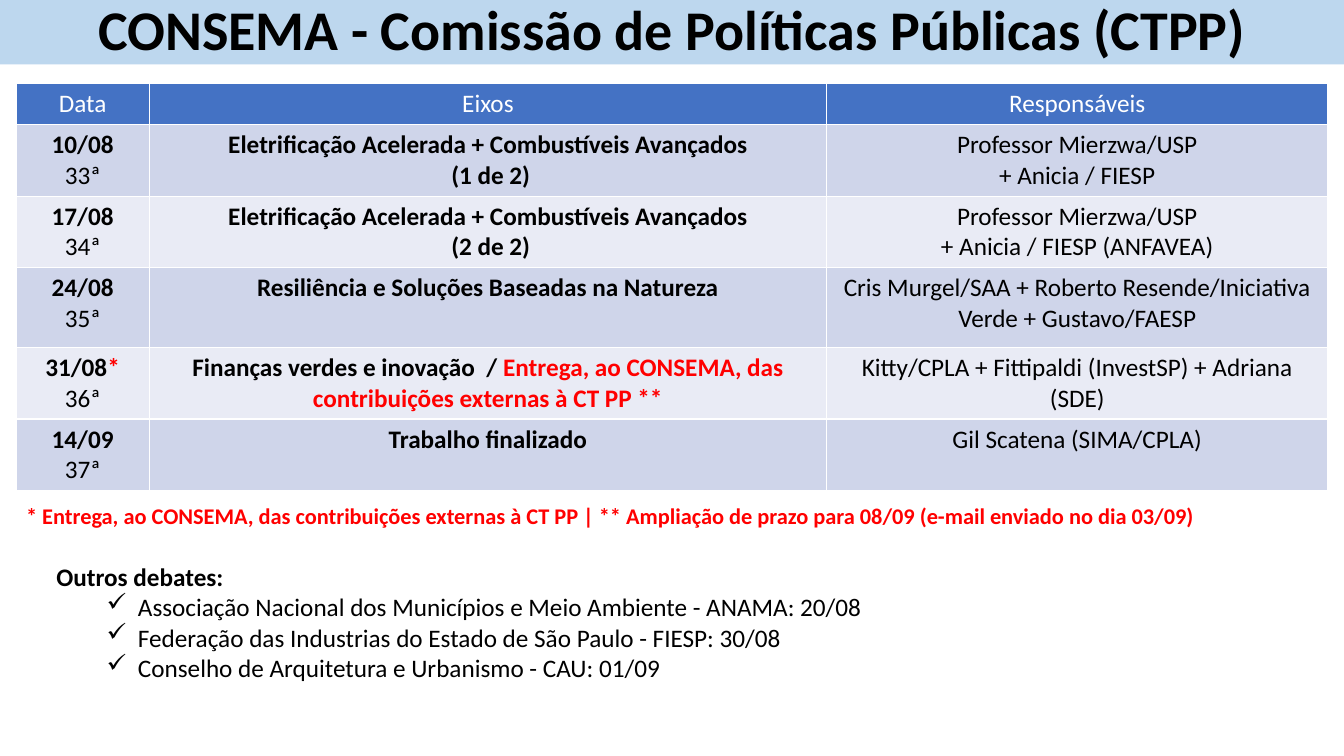
from lxml.etree import SubElement
from pptx import Presentation
from pptx.dml.color import RGBColor
from pptx.enum.shapes import MSO_SHAPE as Shape
from pptx.enum.text import MSO_ANCHOR as Anchor, PP_ALIGN as Align
from pptx.oxml.ns import qn
from pptx.util import Inches, Pt

COLORS = {
    "black": "000000", "white": "FFFFFF", "red": "FF0000", "banner": "BDD7EE",
    "header": "4472C4", "odd": "CFD5EA", "even": "E9EBF5",
}
AXIS = "Eletrificação Acelerada + Combustíveis Avançados"
HEADINGS = ["Data", "Eixos", "Responsáveis"]
# date, date mark, session, axis lines, red end of the axis, people
MEETINGS = [
    ("10/08", "", "33ª", [AXIS, " (1 de 2)"], "",
     ["Professor Mierzwa/USP", "+ Anicia / FIESP"]),
    ("17/08", "", "34ª", [AXIS, " (2 de 2)"], "",
     ["Professor Mierzwa/USP", "+ Anicia / FIESP (ANFAVEA)"]),
    ("24/08", "", "35ª", ["Resiliência e Soluções Baseadas na Natureza"], "",
     ["Cris Murgel/SAA + Roberto Resende/Iniciativa Verde + Gustavo/FAESP"]),
    ("31/08", "*", "36ª", ["Finanças verdes e inovação  / "],
     "Entrega, ao CONSEMA, das contribuições externas à CT PP **",
     ["Kitty/CPLA + Fittipaldi (InvestSP) + Adriana (SDE)"]),
    ("14/09", "", "37ª", ["Trabalho finalizado"], "", ["Gil Scatena (SIMA/CPLA)"]),
]
DEBATES = [
    "Associação Nacional dos Municípios e Meio Ambiente - ANAMA: 20/08",
    "Federação das Industrias do Estado de São Paulo - FIESP: 30/08",
    "Conselho de Arquitetura e Urbanismo - CAU: 01/09",
]


def rgb(name):
    return RGBColor.from_string(COLORS[name])


def inches(*values):
    return [Inches(value) for value in values]


class Deck:
    font = "Calibri"

    def __init__(self):
        self.presentation = Presentation()
        self.presentation.slide_width, self.presentation.slide_height = inches(13.33, 7.5)
        self.slide = self.presentation.slides.add_slide(self.presentation.slide_layouts[6])

    def add_lines(self, frame, lines, size=18, align=Align.LEFT):
        """Each line is a list of (text, color, bold) runs."""
        for index, runs in enumerate(lines):
            paragraph = frame.add_paragraph() if index else frame.paragraphs[0]
            paragraph.alignment = align
            for text, color, bold in runs:
                run = paragraph.add_run()
                run.text = text
                run.font.name = self.font
                run.font.size = Pt(size)
                run.font.bold = bold
                run.font.color.rgb = rgb(color)

    def banner(self, title, *place):
        bar = self.slide.shapes.add_shape(Shape.RECTANGLE, *inches(*place))
        bar.shadow.inherit = False
        bar.fill.solid()
        bar.fill.fore_color.rgb = rgb("banner")
        bar.line.fill.background()
        frame = bar.text_frame
        frame.word_wrap = True
        frame.vertical_anchor = Anchor.MIDDLE
        frame.margin_left = frame.margin_right = frame.margin_top = frame.margin_bottom = 0
        self.add_lines(frame, [[(title, "black", True)]], 40, Align.CENTER)
        frame.paragraphs[0].line_spacing = 0.9

    def text(self, lines, *place, size=18):
        frame = self.slide.shapes.add_textbox(*inches(*place)).text_frame
        frame.word_wrap = True
        self.add_lines(frame, lines, size)
        return frame

    def check(self, paragraph):
        """Turn a paragraph into a check-marked list item."""
        props = paragraph._p.get_or_add_pPr()
        props.set("marL", str(Inches(0.81)))
        props.set("indent", str(Inches(-0.31)))
        SubElement(props, qn("a:buChar")).set("char", "✓")

    def cell(self, cell, lines, fill):
        props = cell._tc.get_or_add_tcPr()
        for side in "LRTB":
            border = SubElement(props, qn(f"a:ln{side}"), w=str(Pt(1)))
            paint = SubElement(border, qn("a:solidFill"))
            SubElement(paint, qn("a:srgbClr"), val=COLORS["white"])
        cell.fill.solid()
        cell.fill.fore_color.rgb = rgb(fill)
        self.add_lines(cell.text_frame, lines, align=Align.CENTER)

    def table(self, rows, widths, heights, *place):
        grid = self.slide.shapes.add_table(len(rows), len(widths), *inches(*place)).table
        for column, width in zip(grid.columns, widths):
            column.width = Inches(width)
        for row, height in zip(grid.rows, heights):
            row.height = Inches(height)
        for r, cells in enumerate(rows):
            fill = "header" if r == 0 else "odd" if r % 2 else "even"
            for c, lines in enumerate(cells):
                self.cell(grid.cell(r, c), lines, fill)


def meeting_cells(date, mark, session, axis, red_end, people):
    when = [[(date, "black", True)], [(session, "black", False)]]
    if mark:
        when[0].append((mark, "red", True))
    topic = [[(line, "black", True)] for line in axis]
    if red_end:
        topic[-1].append((red_end, "red", True))
    return [when, topic, [[(line, "black", False)] for line in people]]


def main():
    deck = Deck()
    deck.banner("CONSEMA - Comissão de Políticas Públicas (CTPP)", 0, 0, 13.33, 0.64)

    header = [[[(heading, "white", False)]] for heading in HEADINGS]
    schedule = [header] + [meeting_cells(*meeting) for meeting in MEETINGS]
    deck.table(schedule, [1.32, 6.72, 4.97], [0.4, 0.7, 0.7, 0.79, 0.7, 0.7],
               0.16, 0.83, 13.02, 3.99)

    debates = [[("Outros debates:", "black", True)]]
    debates += [[(debate, "black", False)] for debate in DEBATES]
    debate_frame = deck.text(debates, 0.46, 5.52, 12.61, 1.62)
    for item in debate_frame.paragraphs[1:]:
        deck.check(item)

    footnote = ("* Entrega, ao CONSEMA, das contribuições externas à CT PP | "
                "** Ampliação de prazo para 08/09 (e-mail enviado no dia 03/09)")
    deck.text([[(footnote, "red", True)]], 0.16, 4.93, 13.02, 0.37, size=16)

    deck.presentation.save("out.pptx")


if __name__ == "__main__":
    main()
